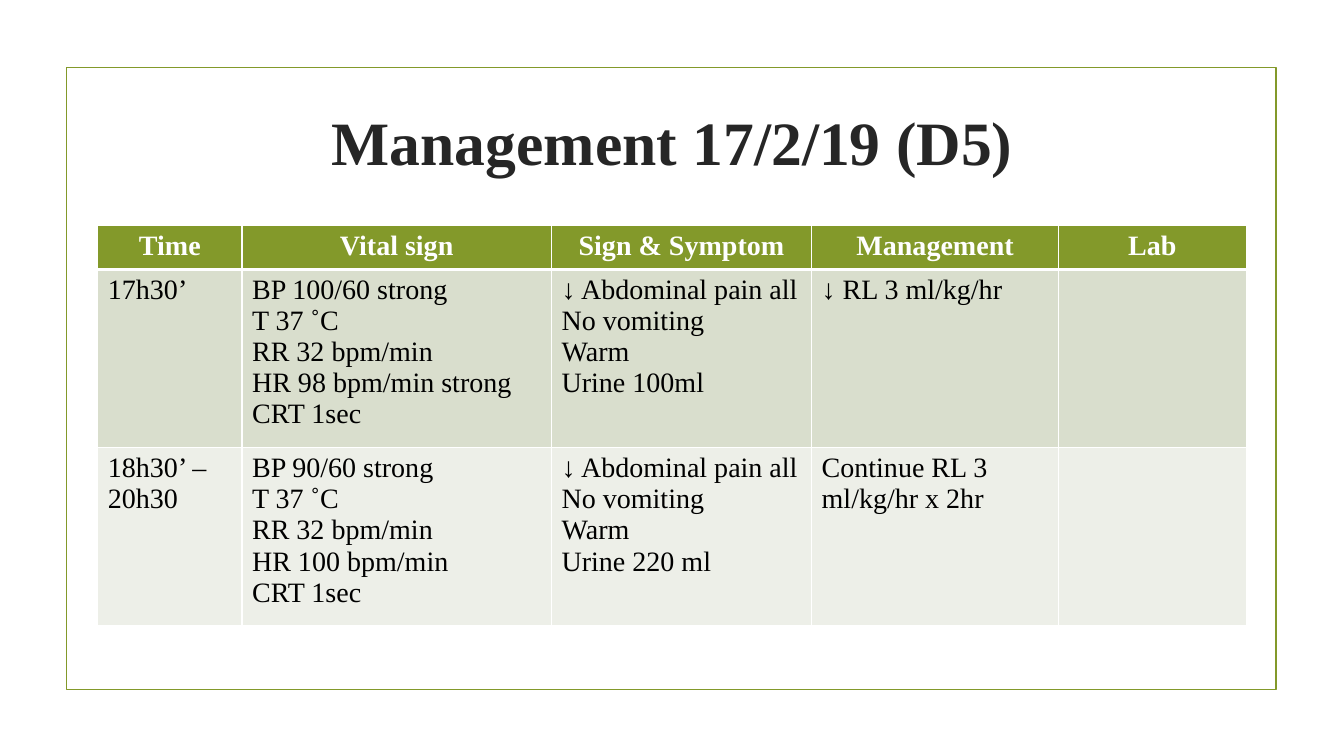
from lxml.etree import SubElement
from pptx import Presentation
from pptx.dml.color import RGBColor
from pptx.enum.shapes import MSO_SHAPE as Shape
from pptx.enum.text import MSO_ANCHOR as Anchor, PP_ALIGN as Align
from pptx.oxml import parse_xml
from pptx.oxml.ns import nsdecls, qn
from pptx.util import Inches, Pt

HEADERS = ["Time", "Vital sign", "Sign & Symptom", "Management", "Lab"]
RECORDS = [
    [["17h30’"],
     ["BP 100/60 strong", "T 37 ˚C", "RR 32 bpm/min", "HR 98 bpm/min strong", "CRT 1sec"],
     ["↓ Abdominal pain all", "No vomiting", "Warm", "Urine 100ml"],
     ["↓ RL 3 ml/kg/hr"],
     []],
    [["18h30’ – 20h30"],
     ["BP 90/60 strong", "T 37 ˚C", "RR 32 bpm/min", "HR 100 bpm/min", "CRT 1sec"],
     ["↓ Abdominal pain all", "No vomiting", "Warm", "Urine 220 ml"],
     ["Continue RL 3 ml/kg/hr x 2hr"],
     []],
]
COLUMN_WIDTHS = [1.43, 3.07, 2.58, 2.45, 1.86]
ROW_HEIGHTS = [0.41, 1.64, 1.64]


def color(value):
    return RGBColor.from_string(value)


class SlideBuilder:
    font = "Times New Roman"
    green = "83992A"
    white = "FFFFFF"
    bands = ["D9DECD", "EDEFE8"]

    def __init__(self, page):
        self.page = page

    def add_lines(self, frame, lines, size, ink, bold=False, align=Align.LEFT):
        for index, line in enumerate(lines):
            para = frame.add_paragraph() if index else frame.paragraphs[0]
            para.alignment = align
            span = para.add_run()
            span.text = line
            span.font.name = self.font
            span.font.size = Pt(size)
            span.font.bold = bold
            span.font.color.rgb = color(ink)

    def frame(self, left, top, width, height):
        box = self.page.shapes.add_shape(
            Shape.RECTANGLE, Inches(left), Inches(top), Inches(width), Inches(height))
        box.shadow.inherit = False
        box.fill.background()
        box.line.color.rgb = color(self.green)
        box.line.width = Pt(1.25)

    def title(self, text, left, top, width, height):
        box = self.page.shapes.add_textbox(
            Inches(left), Inches(top), Inches(width), Inches(height))
        box.text_frame.word_wrap = True
        box.text_frame.vertical_anchor = Anchor.MIDDLE
        self.add_lines(box.text_frame, [text], 44, "262626", True, Align.CENTER)

    def borders(self, cell, top, bottom):
        properties = cell._tc.get_or_add_tcPr()
        sides = [("lnL", 1), ("lnR", 1), ("lnT", top), ("lnB", bottom)]
        for position, (side, width) in enumerate(sides):
            line = parse_xml(f'<a:{side} {nsdecls("a")} w="{Pt(width)}"/>')
            fill = SubElement(line, qn("a:solidFill"))
            SubElement(fill, qn("a:srgbClr"), val=self.white)
            properties.insert(position, line)

    def table(self, left, top):
        rows = [[[header] for header in HEADERS]] + RECORDS
        grid = self.page.shapes.add_table(
            len(rows), len(HEADERS), Inches(left), Inches(top),
            Inches(sum(COLUMN_WIDTHS)), Inches(sum(ROW_HEIGHTS))).table
        for column, width in zip(grid.columns, COLUMN_WIDTHS):
            column.width = Inches(width)
        for row, height in zip(grid.rows, ROW_HEIGHTS):
            row.height = Inches(height)
        fills = [self.green] + self.bands
        for r, row in enumerate(rows):
            for c, lines in enumerate(row):
                cell = grid.cell(r, c)
                cell.fill.solid()
                cell.fill.fore_color.rgb = color(fills[r])
                # A thick rule separates the header from the records
                self.borders(cell, 3 if r == 1 else 1, 3 if r == 0 else 1)
                if r == 0:
                    self.add_lines(cell.text_frame, lines, 20, self.white, True, Align.CENTER)
                else:
                    self.add_lines(cell.text_frame, lines, 20, "000000")


def main():
    deck = Presentation()
    deck.slide_width, deck.slide_height = Inches(13.33), Inches(7.5)
    builder = SlideBuilder(deck.slides.add_slide(deck.slide_layouts[6]))

    # Page frame and title
    builder.frame(0.66, 0.67, 12, 6.17)
    builder.title("Management 17/2/19 (D5)", 1.42, 0.68, 10.5, 1.43)

    # Treatment record
    builder.table(0.97, 2.24)

    deck.save("out.pptx")


if __name__ == "__main__":
    main()
